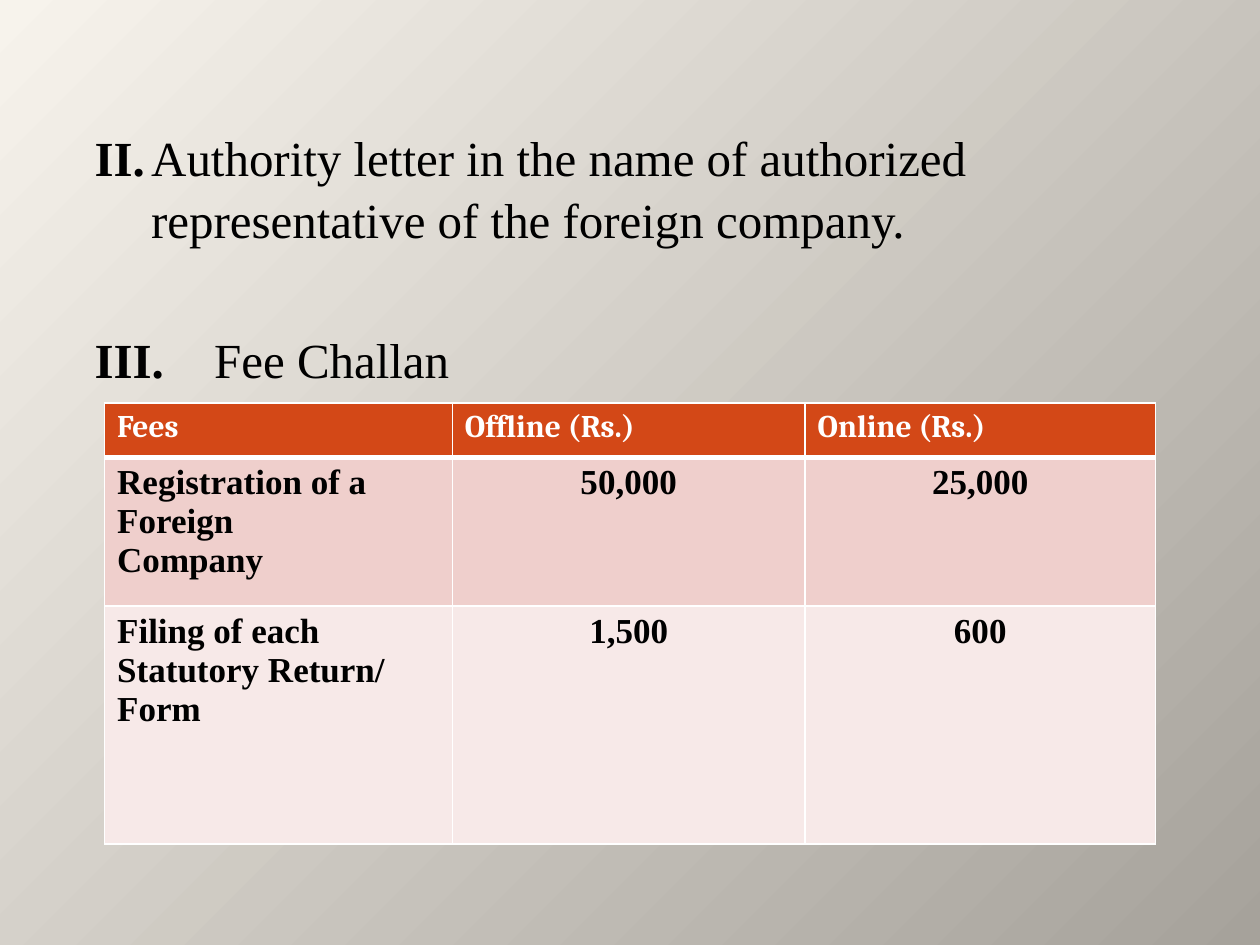
import pptx
import pptx.dml.color
import pptx.enum.text
import pptx.oxml
import pptx.oxml.ns
import pptx.util
from pptx.util import Inches, Pt

COLORS = {
    "light": "F7F3EC",
    "dark": "A6A29B",
    "text": "000000",
    "white": "FFFFFF",
    "header": "D34817",
    "odd_row": "EFCFCC",
    "even_row": "F7E9E8",
}
SERIF = "Times New Roman"
REQUIREMENTS = [
    ("II.\t", "Authority letter in the name of authorized representative of the foreign company."),
    ("III. \t", "Fee Challan"),
]
FEES = [
    ("Fees", "Offline (Rs.)", "Online (Rs.)"),
    ("Registration of a Foreign\nCompany", "50,000", "25,000"),
    ("Filing of each Statutory Return/\nForm", "1,500", "600"),
]
COLUMN_WIDTHS = (2.76, 2.8, 2.78)
ROW_HEIGHTS = (0.43, 1.18, 1.89)


def rgb(name):
    return pptx.dml.color.RGBColor.from_string(COLORS[name])


def format_span(span, size, font, color, bold):
    span.font.size = Pt(size)
    span.font.name = font
    span.font.bold = bold
    span.font.color.rgb = rgb(color)


def set_background(page):
    fill = page.background.fill
    fill.gradient()
    fill.gradient_angle = 315
    for stop, color in zip(fill.gradient_stops, ("light", "dark")):
        stop.color.rgb = rgb(color)


def hang_indent(para):
    """Hang the numeral left of the text and turn the bullet off."""
    properties = para._p.get_or_add_pPr()
    properties.set("marL", str(Inches(0.6)))
    properties.set("indent", str(Inches(-0.45)))
    pptx.oxml.ns  # namespace helpers used below
    properties.append(pptx.oxml.parse_xml(
        f'<a:buNone {pptx.oxml.ns.nsdecls("a")}/>'))


def fill_requirements(box):
    box.left, box.top, box.width, box.height = map(Inches, (0.5, 0.36, 9, 6.34))
    frame = box.text_frame
    frame.auto_size = pptx.enum.text.MSO_AUTO_SIZE.NONE
    frame.margin_top = Inches(0.63)
    for index, (numeral, wording) in enumerate(REQUIREMENTS):
        para = frame.add_paragraph() if index else frame.paragraphs[0]
        para.line_spacing = 1.05
        para.space_before = Pt(44.5 if index else 0)
        hang_indent(para)
        for text, bold in ((numeral, True), (wording, False)):
            span = para.add_run()
            span.text = text
            format_span(span, 28, SERIF, "text", bold)


def set_borders(cell, bottom_width, top_width):
    properties = cell._tc.get_or_add_tcPr()
    widths = {"lnL": 1, "lnR": 1, "lnT": top_width, "lnB": bottom_width}
    for position, (side, width) in enumerate(widths.items()):
        properties.insert(position, pptx.oxml.parse_xml(
            f'<a:{side} {pptx.oxml.ns.nsdecls("a")} w="{Pt(width)}"><a:solidFill>'
            f'<a:srgbClr val="{COLORS["white"]}"/></a:solidFill></a:{side}>'))


def fill_cell(cell, text, row, column):
    cell.fill.solid()
    cell.fill.fore_color.rgb = rgb(("header", "odd_row", "even_row")[row])
    set_borders(cell, 3 if row == 0 else 1, 3 if row == 1 else 1)
    cell.text_frame.text = text
    style = (20, SERIF, "text") if row else (18, "Cambria", "white")
    for para in cell.text_frame.paragraphs:
        if row and column:
            para.alignment = pptx.enum.text.PP_ALIGN.CENTER
        for span in para.runs:
            format_span(span, *style, True)


def add_fee_table(page):
    table = page.shapes.add_table(
        len(FEES), len(COLUMN_WIDTHS), Inches(0.83), Inches(3.2),
        Inches(sum(COLUMN_WIDTHS)), Inches(sum(ROW_HEIGHTS))).table
    for column, width in zip(table.columns, COLUMN_WIDTHS):
        column.width = Inches(width)
    for row, height in zip(table.rows, ROW_HEIGHTS):
        row.height = Inches(height)
    for row, texts in enumerate(FEES):
        for column, text in enumerate(texts):
            fill_cell(table.cell(row, column), text, row, column)


def main():
    deck = pptx.Presentation()
    deck.slide_width, deck.slide_height = Inches(10), Inches(7.5)
    page = deck.slides.add_slide(deck.slide_layouts[1])
    set_background(page)
    title = page.shapes.title.element
    title.getparent().remove(title)
    fill_requirements(page.placeholders[1])
    add_fee_table(page)
    deck.save("out.pptx")


if __name__ == "__main__":
    main()
